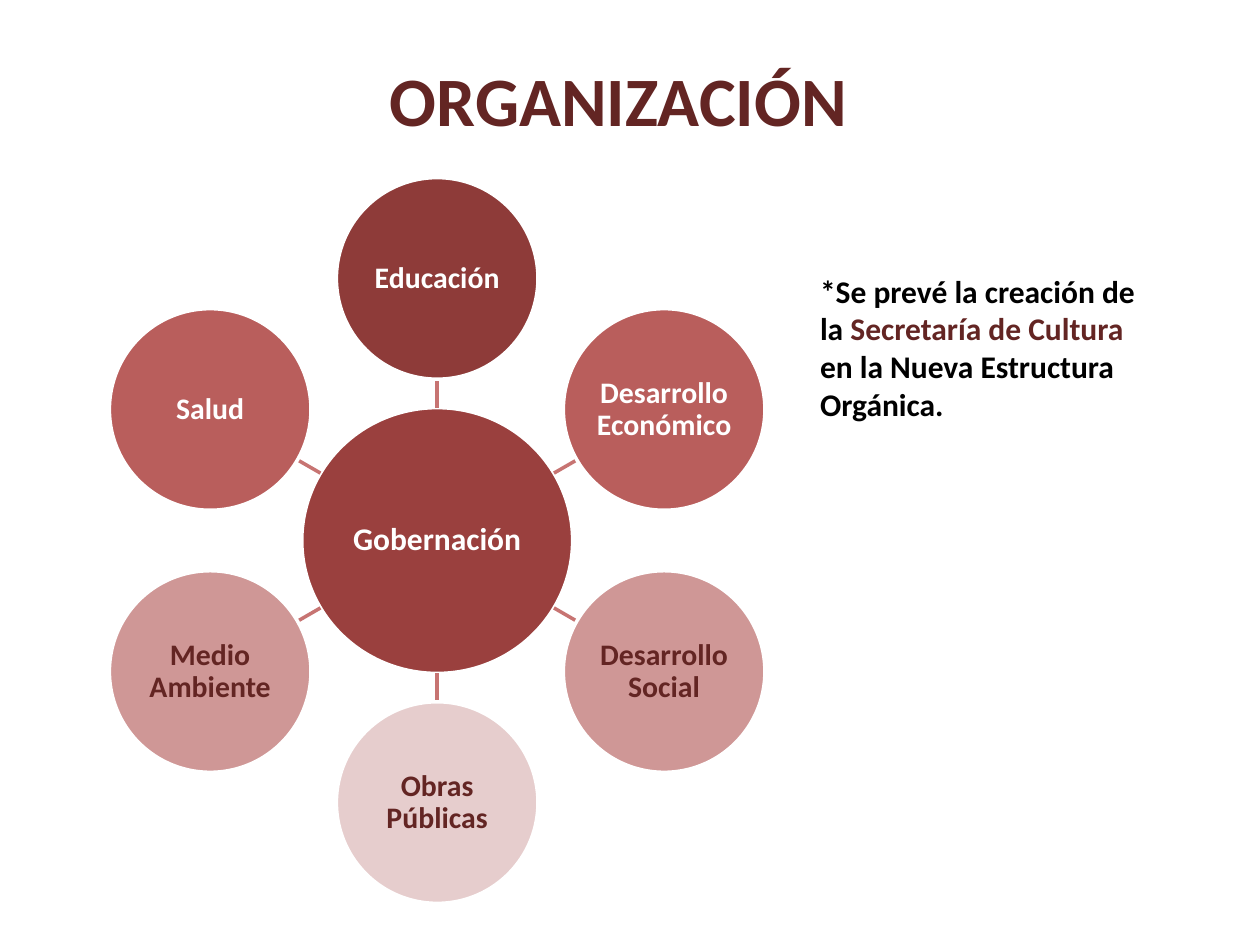
from dataclasses import dataclass
from math import cos, hypot, radians, sin

from lxml import etree
from pptx import Presentation
from pptx import util as u
from pptx.dml.color import RGBColor
from pptx.enum import shapes, text
from pptx.oxml import ns

WIDTH, HEIGHT = 10, 7.5
FONT = "Calibri"
COLORS = {
    "wine": "632523",
    "hub": "9A403E",
    "dark": "8E3B39",
    "medium": "B95E5C",
    "light": "CF9796",
    "pale": "E6CDCD",
    "spoke": "C77472",
    "white": "FFFFFF",
    "black": "000000",
}
CENTER_X, CENTER_Y = 0.347 * WIDTH, 0.572 * HEIGHT
ORBIT = 2.08
NODE_SIZE = 1.6
HUB_WIDTH, HUB_HEIGHT = 2.15, 2.11


@dataclass(frozen=True)
class Circle:
    label: str
    fill: str
    ink: str


@dataclass(frozen=True)
class Span:
    words: str
    color: str


HUB = Circle("Gobernación", "hub", "white")
DEPARTMENTS = [
    Circle("Educación", "dark", "white"),
    Circle("Desarrollo Económico", "medium", "white"),
    Circle("Desarrollo Social", "light", "wine"),
    Circle("Obras Públicas", "pale", "wine"),
    Circle("Medio Ambiente", "light", "wine"),
    Circle("Salud", "medium", "white"),
]
NOTE = [
    Span("*Se prevé la creación de la ", "black"),
    Span("Secretaría de Cultura", "wine"),
    Span(" en la Nueva Estructura Orgánica.", "black"),
]


def color(name: str) -> RGBColor:
    return RGBColor.from_string(COLORS[name])


def style_font(font, size: float, ink: str) -> None:
    font.name = FONT
    font.size = u.Pt(size)
    font.bold = True
    font.color.rgb = color(ink)


def polar(radius: float, angle: float) -> tuple[float, float]:
    return CENTER_X + radius * sin(angle), CENTER_Y - radius * cos(angle)


def draw_circle(slide, circle: Circle, x: float, y: float,
                width: float, height: float, size: float) -> None:
    shape = slide.shapes.add_shape(
        shapes.MSO_SHAPE.OVAL, u.Inches(x - width / 2), u.Inches(y - height / 2),
        u.Inches(width), u.Inches(height))
    shape.shadow.inherit = False
    shape.fill.solid()
    shape.fill.fore_color.rgb = color(circle.fill)
    shape.line.color.rgb = color("white")
    shape.line.width = u.Pt(2)
    frame = shape.text_frame
    frame.text = circle.label
    frame.word_wrap = True
    frame.vertical_anchor = text.MSO_ANCHOR.MIDDLE
    frame.margin_left = frame.margin_right = u.Inches(0.01)
    frame.margin_top = frame.margin_bottom = u.Inches(0.01)
    paragraph = frame.paragraphs[0]
    paragraph.alignment = text.PP_ALIGN.CENTER
    paragraph.line_spacing = 0.9
    style_font(paragraph.runs[0].font, size, circle.ink)


def draw_spoke(slide, angle: float) -> None:
    hub_edge = 1 / hypot(2 * sin(angle) / HUB_WIDTH, 2 * cos(angle) / HUB_HEIGHT)
    ends = polar(hub_edge, angle) + polar(ORBIT - NODE_SIZE / 2, angle)
    connector = slide.shapes.add_connector(
        shapes.MSO_CONNECTOR.STRAIGHT, *(u.Inches(value) for value in ends))
    connector.line.color.rgb = color("spoke")
    connector.line.width = u.Pt(2)
    etree.SubElement(connector._element.spPr, ns.qn("a:effectLst"))


def draw_text(slide, spans: list[Span], left: float, top: float, width: float,
              height: float, size: float, anchor, alignment) -> None:
    box = slide.shapes.add_textbox(
        u.Inches(left * WIDTH), u.Inches(top * HEIGHT),
        u.Inches(width * WIDTH), u.Inches(height * HEIGHT))
    frame = box.text_frame
    frame.word_wrap = True
    frame.vertical_anchor = anchor
    paragraph = frame.paragraphs[0]
    paragraph.alignment = alignment
    for span in spans:
        run = paragraph.add_run()
        run.text = span.words
        style_font(run.font, size, span.color)


def main() -> None:
    presentation = Presentation()
    presentation.slide_width = u.Inches(WIDTH)
    presentation.slide_height = u.Inches(HEIGHT)
    slide = presentation.slides.add_slide(presentation.slide_layouts[6])

    draw_text(slide, [Span("ORGANIZACIÓN ", "wine")], 0.044, 0.057, 0.906, 0.095,
              39.6, text.MSO_ANCHOR.MIDDLE, text.PP_ALIGN.CENTER)
    draw_circle(slide, HUB, CENTER_X, CENTER_Y, HUB_WIDTH, HUB_HEIGHT, 18)
    for index, department in enumerate(DEPARTMENTS):
        angle = radians(index * 360 / len(DEPARTMENTS))
        draw_spoke(slide, angle)
        draw_circle(slide, department, *polar(ORBIT, angle), NODE_SIZE, NODE_SIZE, 17)
    draw_text(slide, NOTE, 0.641, 0.281, 0.289, 0.175,
              18, text.MSO_ANCHOR.TOP, text.PP_ALIGN.LEFT)

    presentation.save("out.pptx")


if __name__ == "__main__":
    main()
